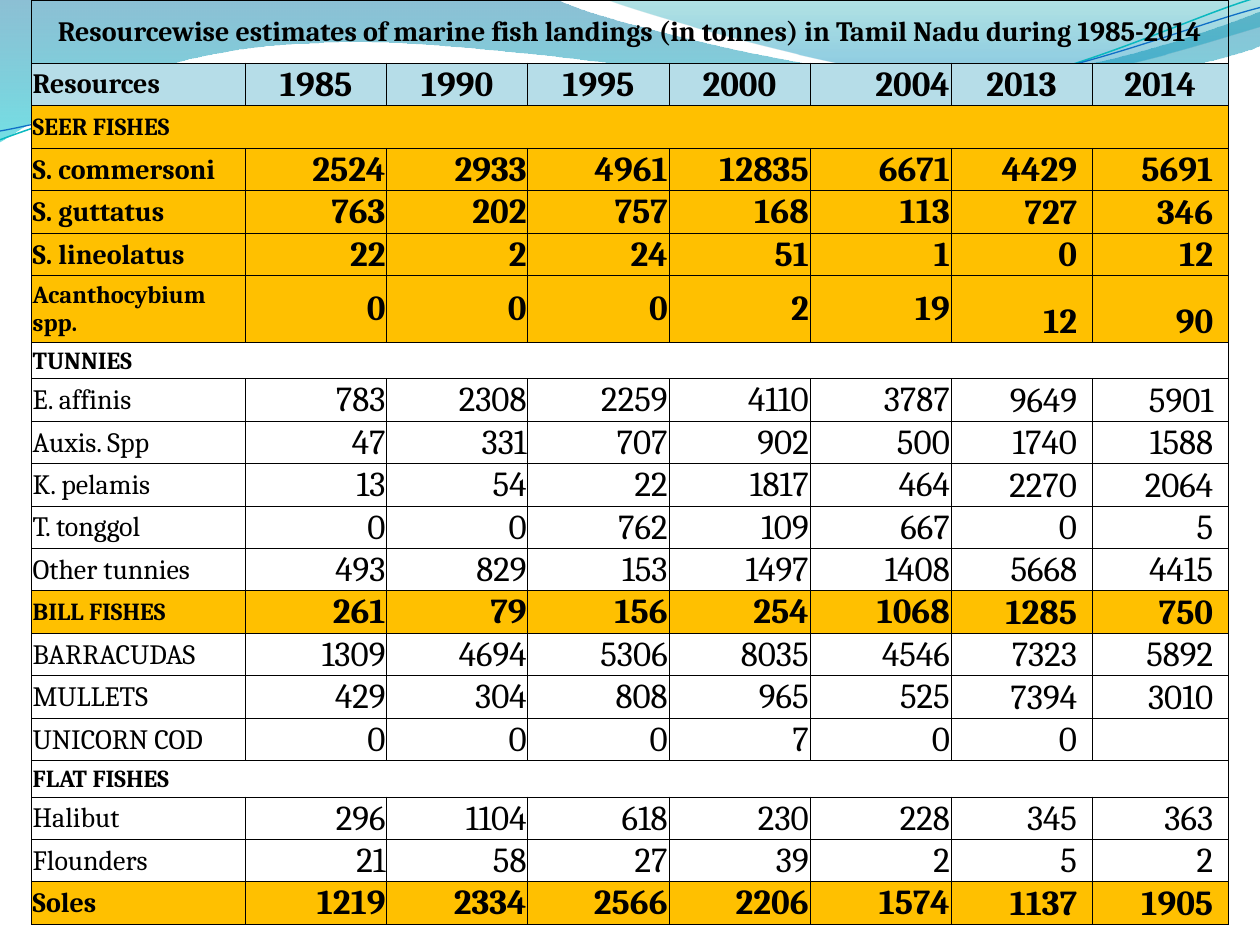
"""Build a slide with a table of marine fish landings in Tamil Nadu."""
from lxml import etree
from pptx import Presentation
from pptx.dml.color import RGBColor
from pptx.enum.text import MSO_ANCHOR as Anchor, PP_ALIGN as Align
from pptx.oxml.ns import qn
from pptx.util import Inches, Pt

BLACK = RGBColor(0x00, 0x00, 0x00)
HEADER_BLUE = RGBColor(0xB6, 0xDD, 0xE8)
GOLD = RGBColor(0xFF, 0xC0, 0x00)
DEEP_BLUE = RGBColor(0x00, 0x74, 0xA1)
CYAN = RGBColor(0x00, 0xC6, 0xCF)
TEAL = RGBColor(0x00, 0xA1, 0xA9)
SEA_BLUE = RGBColor(0x00, 0x8B, 0xBF)
LINE_TEAL = RGBColor(0x0A, 0xB8, 0xBF)
LINE_BLUE = RGBColor(0x0F, 0x6F, 0xC6)

presentation = Presentation()
presentation.slide_width = Inches(10)
presentation.slide_height = Inches(7.5)
slide = presentation.slides.add_slide(presentation.slide_layouts[6])


def add_wave(start, segments, closed):
    places = [(Inches(x), Inches(y)) for segment in segments
              for x, y in zip(segment[::2], segment[1::2])]
    builder = slide.shapes.build_freeform(Inches(start[0]), Inches(start[1]))
    builder.add_line_segments(places, close=closed)
    shape = builder.convert_to_shape()
    shape.shadow.inherit = False
    steps = iter(list(shape._element.iter(qn("a:lnTo"))))
    for segment in segments:
        step = next(steps)
        if len(segment) == 6:
            curve = etree.Element(qn("a:cubicBezTo"))
            step.addprevious(curve)
            for part in (step, next(steps), next(steps)):
                curve.append(part[0])
                part.getparent().remove(part)
    return shape


filled_waves = [
    ((0, 0),
     [(4.4, -0.01), (4.76, 0.17, 6.64, 0.63, 7.58, 0.63),
      (8.53, 0.63, 9.58, 0.26, 10, 0.09), (10.01, 0.36),
      (9.83, 0.44, 8.7, 0.76, 7.46, 0.75), (6.22, 0.75, 3.82, 0.28, 2.57, 0.34),
      (1.29, 0.36, 0.46, 0.83, -0.01, 1.13), (0, 0)],
     [(0, DEEP_BLUE, 45), (1, CYAN, 55)]),
    ((4.79, -0.01),
     [(5.09, 0.11, 6.82, 0.62, 7.69, 0.65), (8.56, 0.69, 9.61, 0.32, 10, 0.21),
      (10, 0), (4.79, -0.01)],
     [(0, TEAL, 30), (0.8, SEA_BLUE, 45)]),
]
for start, segments, stops in filled_waves:
    wave = add_wave(start, segments, True)
    wave.line.fill.background()
    wave.fill.gradient()
    wave.fill.gradient_angle = 270
    for stop, (position, color, opacity) in zip(wave.fill.gradient_stops, stops):
        stop.position = position
        stop.color.rgb = color
    for element, (position, color, opacity) in zip(wave._element.iter(qn("a:srgbClr")), stops):
        etree.SubElement(element, qn("a:alpha"), val=str(opacity * 1000))

line_waves = [
    ((0, 1.11),
     [(0.48, 0.93, 1.58, 0.57, 2.77, 0.52), (3.95, 0.47, 5.93, 0.89, 7.13, 0.8),
      (8.33, 0.71, 9.38, 0.15, 9.98, -0.02)], LINE_TEAL, 0.85),
    ((0, 1.04),
     [(0.47, 0.96, 1.64, 0.61, 2.83, 0.56), (4.03, 0.51, 5.97, 0.84, 7.17, 0.75),
      (8.36, 0.67, 9.41, 0.21, 10, 0.06)], LINE_BLUE, 0.75),
]
for start, segments, color, width in line_waves:
    wave = add_wave(start, segments, False)
    wave.fill.background()
    wave.line.color.rgb = color
    wave.line.width = Pt(width)

TITLE = "Resourcewise estimates of marine fish landings (in tonnes) in Tamil Nadu during 1985-2014"
rows = [
    (TITLE, "", 16, None, True),
    ("Resources", "1985 1990 1995 2000 2004 2013 2014", 16, HEADER_BLUE, True),
    ("SEER FISHES", "", 14, GOLD, True),
    ("S. commersoni", "2524 2933 4961 12835 6671 4429 5691", 16, GOLD, True),
    ("S. guttatus", "763 202 757 168 113 727 346", 16, GOLD, True),
    ("S. lineolatus", "22 2 24 51 1 0 12", 16, GOLD, True),
    ("Acanthocybium spp.", "0 0 0 2 19 12 90", 14, GOLD, True),
    ("TUNNIES", "", 14, None, True),
    ("E. affinis", "783 2308 2259 4110 3787 9649 5901", 16, None, False),
    ("Auxis. Spp", "47 331 707 902 500 1740 1588", 16, None, False),
    ("K. pelamis", "13 54 22 1817 464 2270 2064", 16, None, False),
    ("T. tonggol", "0 0 762 109 667 0 5", 16, None, False),
    ("Other tunnies", "493 829 153 1497 1408 5668 4415", 16, None, False),
    ("BILL FISHES", "261 79 156 254 1068 1285 750", 14, GOLD, True),
    ("BARRACUDAS", "1309 4694 5306 8035 4546 7323 5892", 16, None, False),
    ("MULLETS", "429 304 808 965 525 7394 3010", 16, None, False),
    ("UNICORN COD", "0 0 0 7 0 0", 16, None, False),
    ("FLAT FISHES", "", 14, None, True),
    ("Halibut", "296 1104 618 230 228 345 363", 16, None, False),
    ("Flounders", "21 58 27 39 2 5 2", 16, None, False),
    ("Soles", "1219 2334 2566 2206 1574 1137 1905", 16, GOLD, True),
]
TABLE_HEIGHT = 7.34
column_widths = [1.7] + [1.12] * 6 + [1.08]
special_heights = {TITLE: 0.5, "SEER FISHES": 0.34, "Acanthocybium spp.": 0.53,
                   "TUNNIES": 0.29, "FLAT FISHES": 0.29}
regular_height = ((TABLE_HEIGHT - sum(special_heights.values()))
                  / (len(rows) - len(special_heights)))

table = slide.shapes.add_table(len(rows), len(column_widths), Inches(0.25), Inches(0),
                               Inches(9.5), Inches(TABLE_HEIGHT)).table
table.first_row = False
table.horz_banding = False
for column, width in zip(table.columns, column_widths):
    column.width = Inches(width)


def style_cell(cell, text, size, bold, fill, align, inset_right, anchor):
    cell.margin_left = cell.margin_top = Inches(0.01)
    cell.margin_right = Inches(inset_right)
    cell.margin_bottom = Inches(0)
    cell.vertical_anchor = anchor
    properties = cell._tc.get_or_add_tcPr()
    for side in ("lnL", "lnR", "lnT", "lnB"):
        border = etree.SubElement(properties, qn("a:" + side), w=str(Pt(0.5)))
        solid = etree.SubElement(border, qn("a:solidFill"))
        etree.SubElement(solid, qn("a:srgbClr"), val=str(BLACK))
    if fill is None:
        cell.fill.background()
    else:
        cell.fill.solid()
        cell.fill.fore_color.rgb = fill
    if not text:
        return
    paragraph = cell.text_frame.paragraphs[0]
    paragraph.text = text
    paragraph.alignment = align
    for run in paragraph.runs:
        run.font.name = "Cambria"
        run.font.size = Pt(size)
        run.font.bold = bold
        run.font.color.rgb = BLACK


for row_index, (label, values, size, fill, bold) in enumerate(rows):
    table.rows[row_index].height = Inches(special_heights.get(label, regular_height))
    first_cell = table.cell(row_index, 0)
    label_align = Align.CENTER if label == TITLE else Align.LEFT
    style_cell(first_cell, label, size, bold, fill, label_align, 0.01, Anchor.MIDDLE)
    if not values:
        first_cell.merge(table.cell(row_index, len(column_widths) - 1))
        continue
    numbers = values.split()
    for column_index in range(1, len(column_widths)):
        number = numbers[column_index - 1] if column_index <= len(numbers) else ""
        is_header = label == "Resources"
        is_recent = column_index >= 6 and not is_header
        align = Align.CENTER if is_header and number != "2004" else Align.RIGHT
        style_cell(table.cell(row_index, column_index), number, 20, bold, fill, align,
                   0.12 if is_recent else 0.01,
                   Anchor.BOTTOM if is_recent else Anchor.MIDDLE)

presentation.save("out.pptx")
